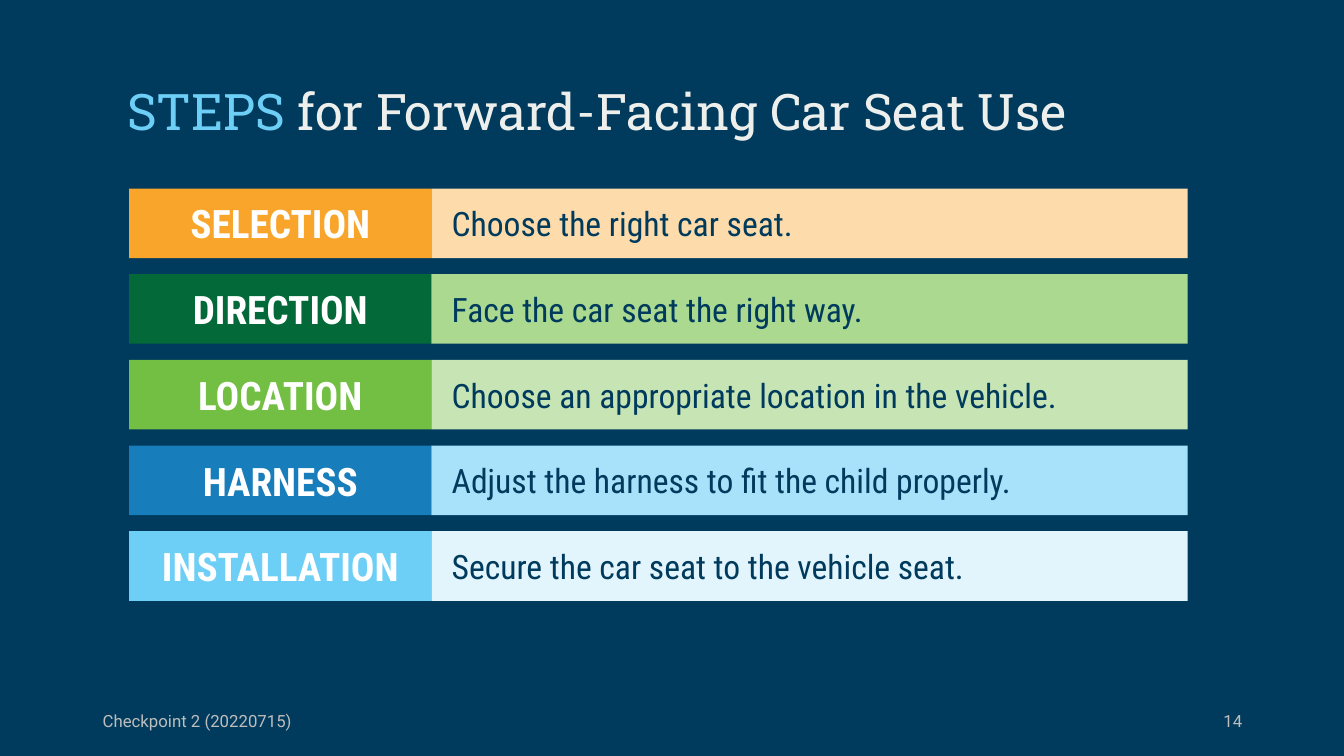
from pptx import Presentation
from pptx.dml.color import RGBColor
from pptx.enum.shapes import MSO_SHAPE
from pptx.enum.text import MSO_ANCHOR, MSO_AUTO_SIZE, PP_ALIGN
from pptx.util import Pt

PX = 9144  # EMU per px, 100 px to the inch
RECTANGLE = MSO_SHAPE.RECTANGLE
TOP, MIDDLE = MSO_ANCHOR.TOP, MSO_ANCHOR.MIDDLE
LEFT, CENTER, RIGHT = PP_ALIGN.LEFT, PP_ALIGN.CENTER, PP_ALIGN.RIGHT
NO_AUTOFIT = MSO_AUTO_SIZE.NONE
TITLE_ONLY = 5

NAVY = RGBColor(0x00, 0x3A, 0x5C)
WHITE = RGBColor(0xFF, 0xFF, 0xFF)
OFF_WHITE = RGBColor(0xED, 0xEF, 0xEC)
GRAY = RGBColor(0xBE, 0xBE, 0xBD)
ORANGE = RGBColor(0xF9, 0xA5, 0x2B)
PEACH = RGBColor(0xFD, 0xDB, 0xAA)
DARK_GREEN = RGBColor(0x04, 0x69, 0x38)
MID_GREEN = RGBColor(0xAA, 0xD9, 0x8F)
GREEN = RGBColor(0x72, 0xBF, 0x44)
PALE_GREEN = RGBColor(0xC7, 0xE5, 0xB4)
BLUE = RGBColor(0x17, 0x7D, 0xBB)
LIGHT_BLUE = RGBColor(0xA7, 0xE2, 0xFA)
SKY = RGBColor(0x6D, 0xCF, 0xF6)
PALE_SKY = RGBColor(0xE2, 0xF5, 0xFD)

STEPS = [
    ("SELECTION", "Choose the right car seat.", ORANGE, PEACH),
    ("DIRECTION", "Face the car seat the right way.", DARK_GREEN, MID_GREEN),
    ("LOCATION", "Choose an appropriate location in the vehicle.", GREEN, PALE_GREEN),
    ("HARNESS", "Adjust the harness to fit the child properly.", BLUE, LIGHT_BLUE),
    ("INSTALLATION", "Secure the car seat to the vehicle seat.", SKY, PALE_SKY),
]
ROWS_TOP, ROW_PITCH, ROW_HEIGHT = 187, 85, 69
LABEL_LEFT, LABEL_WIDTH, ADVICE_WIDTH = 128, 300, 750


def to_emu(*lengths):
    return [length * PX for length in lengths]


def write_line(shape, text, font_name, size, color, align=LEFT, bold=False):
    frame = shape.text_frame
    frame.word_wrap = True
    frame.vertical_anchor = MIDDLE
    para = frame.paragraphs[0]
    para.text = text
    para.alignment = align
    para.font.name = font_name
    para.font.size = Pt(size)
    para.font.bold = bold
    para.font.color.rgb = color


def add_bar(page, left, top, width, fill):
    bar = page.shapes.add_shape(RECTANGLE, *to_emu(left, top, width, ROW_HEIGHT))
    bar.shadow.inherit = False
    bar.fill.solid()
    bar.fill.fore_color.rgb = fill
    bar.line.fill.background()
    return bar


def add_step(page, top, label, advice, label_fill, advice_fill):
    label_bar = add_bar(page, LABEL_LEFT, top, LABEL_WIDTH, label_fill)
    write_line(label_bar, label, "Roboto Condensed", 28, WHITE, CENTER, bold=True)
    advice_bar = add_bar(page, LABEL_LEFT + LABEL_WIDTH, top, ADVICE_WIDTH, advice_fill)
    advice_bar.text_frame.margin_left = 20 * PX
    write_line(advice_bar, advice, "Roboto Condensed", 24, NAVY)


def add_footer(page, left, text, align):
    box = page.shapes.add_textbox(*to_emu(left, 695, 300, 40))
    write_line(box, text, "Roboto", 12, GRAY, align)


def set_title(page):
    title = page.shapes.title
    title.left, title.top, title.width, title.height = to_emu(116, 81, 973, 59)
    frame = title.text_frame
    frame.auto_size = NO_AUTOFIT
    frame.vertical_anchor = TOP
    para = frame.paragraphs[0]
    para.alignment = LEFT
    para.line_spacing = 0.9
    para.font.name = "Roboto Slab"
    para.font.size = Pt(36)
    for text, color in (("STEPS", SKY), (" for Forward-Facing Car Seat Use", OFF_WHITE)):
        span = para.add_run()
        span.text = text
        span.font.color.rgb = color


def main():
    deck = Presentation()
    deck.slide_width, deck.slide_height = to_emu(1333, 750)
    page = deck.slides.add_slide(deck.slide_layouts[TITLE_ONLY])
    page.background.fill.solid()
    page.background.fill.fore_color.rgb = NAVY

    set_title(page)

    # One row per step, evenly spaced
    for index, step in enumerate(STEPS):
        add_step(page, ROWS_TOP + index * ROW_PITCH, *step)

    # Footer and page number
    add_footer(page, 92, "Checkpoint 2 (20220715)", LEFT)
    add_footer(page, 942, "14", RIGHT)

    deck.save("out.pptx")


if __name__ == "__main__":
    main()
